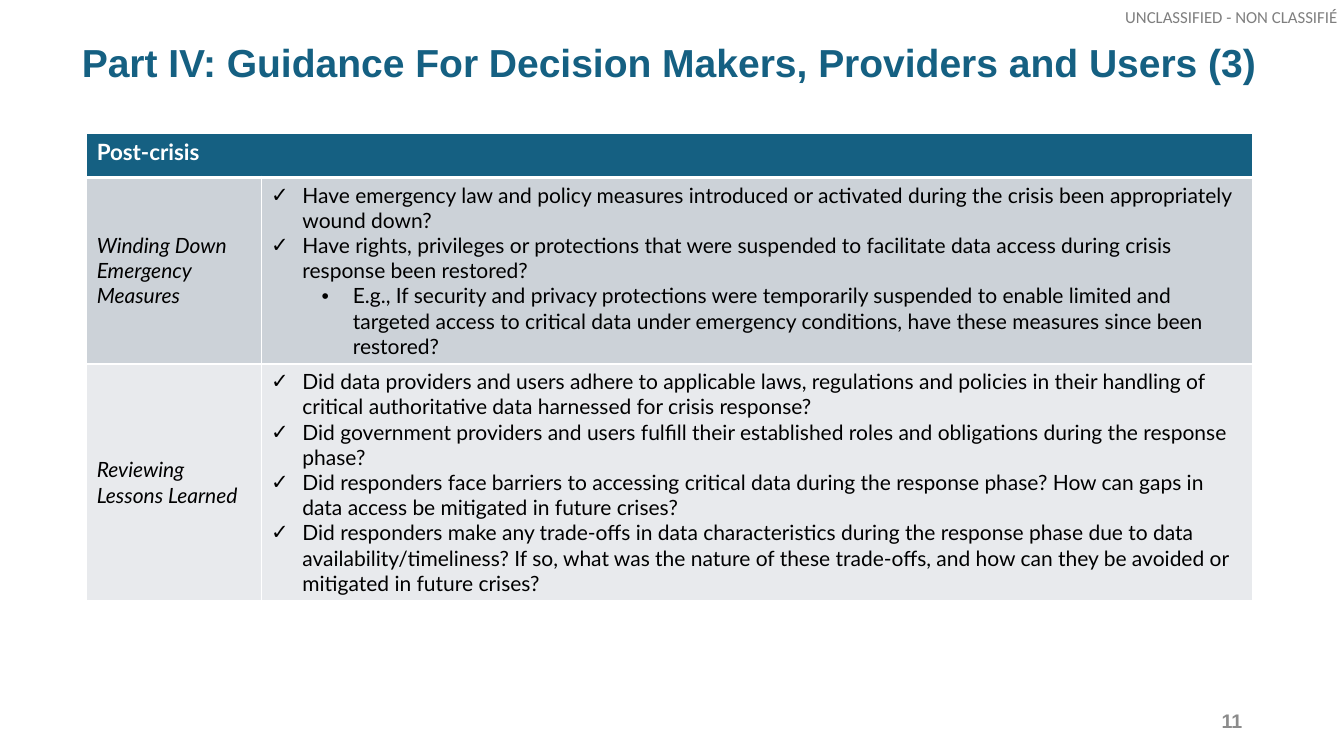
from lxml.etree import SubElement
from pptx import Presentation
from pptx.dml.color import RGBColor
from pptx.enum.text import MSO_ANCHOR, PP_ALIGN
from pptx.oxml import parse_xml
from pptx.oxml.ns import nsdecls, qn
from pptx.util import Inches, Pt

COLORS = {
    "teal": "156082",
    "white": "FFFFFF",
    "black": "000000",
    "marking": "7F7F7F",
    "number": "8C8C8C",
    "dark_band": "CCD2D8",
    "light_band": "E8EAED",
}
FORMATS = {
    "title": {"name": "Arial", "size": Pt(27.9), "bold": True},
    "marking": {"name": "Calibri", "size": Pt(12), "bold": False},
    "number": {"name": "Arial", "size": Pt(14), "bold": True},
    "header": {"name": "Lato", "size": Pt(16), "bold": True},
    "topic": {"name": "Lato", "size": Pt(15), "bold": False, "italic": True},
    "question": {"name": "Lato", "size": Pt(15), "bold": False, "italic": False},
}
BULLETS = [("✓", 0.31), ("•", 0.81)]
HANGING = 0.31
GUIDANCE = [
    ("Winding Down Emergency Measures", "dark_band", [
        (0, "Have emergency law and policy measures introduced or activated during the crisis been appropriately wound down?"),
        (0, "Have rights, privileges or protections that were suspended to facilitate data access during crisis response been restored?"),
        (1, "E.g., If security and privacy protections were temporarily suspended to enable limited and targeted access to critical data under emergency conditions, have these measures since been restored?"),
    ]),
    ("Reviewing Lessons Learned", "light_band", [
        (0, "Did data providers and users adhere to applicable laws, regulations and policies in their handling of critical authoritative data harnessed for crisis response?"),
        (0, "Did government providers and users fulfill their established roles and obligations during the response phase?"),
        (0, "Did responders face barriers to accessing critical data during the response phase? How can gaps in data access be mitigated in future crises?"),
        (0, "Did responders make any trade-offs in data characteristics during the response phase due to data availability/timeliness? If so, what was the nature of these trade-offs, and how can they be avoided or mitigated in future crises?"),
    ]),
]


def write(paragraph, text, style, color):
    run = paragraph.add_run()
    run.text = text
    for attribute, value in FORMATS[style].items():
        setattr(run.font, attribute, value)
    run.font.color.rgb = RGBColor.from_string(COLORS[color])


def paint(cell, color, bottom_width=1):
    cell.fill.solid()
    cell.fill.fore_color.rgb = RGBColor.from_string(COLORS[color])
    properties = cell._tc.get_or_add_tcPr()
    for position, side in enumerate("LRTB"):
        width = Pt(bottom_width if side == "B" else 1)
        properties.insert(position, parse_xml(
            f'<a:ln{side} {nsdecls("a")} w="{width}"><a:solidFill>'
            f'<a:srgbClr val="{COLORS["white"]}"/></a:solidFill></a:ln{side}>'))


deck = Presentation()
deck.slide_width, deck.slide_height = Inches(13.33), Inches(7.5)
slide = deck.slides.add_slide(deck.slide_layouts[5])

title = slide.shapes.title
title.left, title.top = Inches(0.47), Inches(0.35)
title.width, title.height = Inches(12.33), Inches(1.08)
title.text_frame.vertical_anchor = MSO_ANCHOR.TOP
title.text_frame.margin_top = Inches(0.08)
heading = title.text_frame.paragraphs[0]
heading.alignment = PP_ALIGN.CENTER
heading.line_spacing = 0.9
write(heading, "Part IV: Guidance For Decision Makers, Providers and Users (3)", "title", "teal")

marking = slide.shapes.add_textbox(Inches(11.16), Inches(0.07), Inches(2.15), Inches(0.2)).text_frame
for margin in ("margin_left", "margin_top", "margin_right", "margin_bottom"):
    setattr(marking, margin, 0)
write(marking.paragraphs[0], "UNCLASSIFIED - NON CLASSIFIÉ", "marking", "marking")

page_number = slide.shapes.add_textbox(Inches(9.42), Inches(6.95), Inches(3), Inches(0.4)).text_frame
page_number.word_wrap = True
page_number.vertical_anchor = MSO_ANCHOR.MIDDLE
page_number.paragraphs[0].alignment = PP_ALIGN.RIGHT
write(page_number.paragraphs[0], "11", "number", "number")

checklist = slide.shapes.add_table(3, 2, Inches(0.86), Inches(1.32), Inches(11.56), Inches(4.64)).table
for column, width in zip(checklist.columns, (1.73, 9.83)):
    column.width = Inches(width)
for row, height in zip(checklist.rows, (0.44, 1.85, 2.35)):
    row.height = Inches(height)

phase = checklist.cell(0, 0)
phase.merge(checklist.cell(0, 1))
for cell in checklist.rows[0].cells:
    paint(cell, "teal", bottom_width=3)
write(phase.text_frame.paragraphs[0], "Post-crisis", "header", "white")

for row, (topic, band, questions) in enumerate(GUIDANCE, start=1):
    topic_cell, question_cell = checklist.rows[row].cells
    for cell in (topic_cell, question_cell):
        paint(cell, band)
        cell.vertical_anchor = MSO_ANCHOR.MIDDLE
    write(topic_cell.text_frame.paragraphs[0], topic, "topic", "black")

    for index, (level, question) in enumerate(questions):
        frame = question_cell.text_frame
        paragraph = frame.add_paragraph() if index else frame.paragraphs[0]
        paragraph.level = level
        mark, indent = BULLETS[level]
        settings = paragraph._p.get_or_add_pPr()
        settings.set("marL", str(Inches(indent)))
        settings.set("indent", str(-Inches(HANGING)))
        SubElement(settings, qn("a:buFont"), typeface="Arial")
        SubElement(settings, qn("a:buChar"), char=mark)
        write(paragraph, question, "question", "black")

deck.save("out.pptx")
